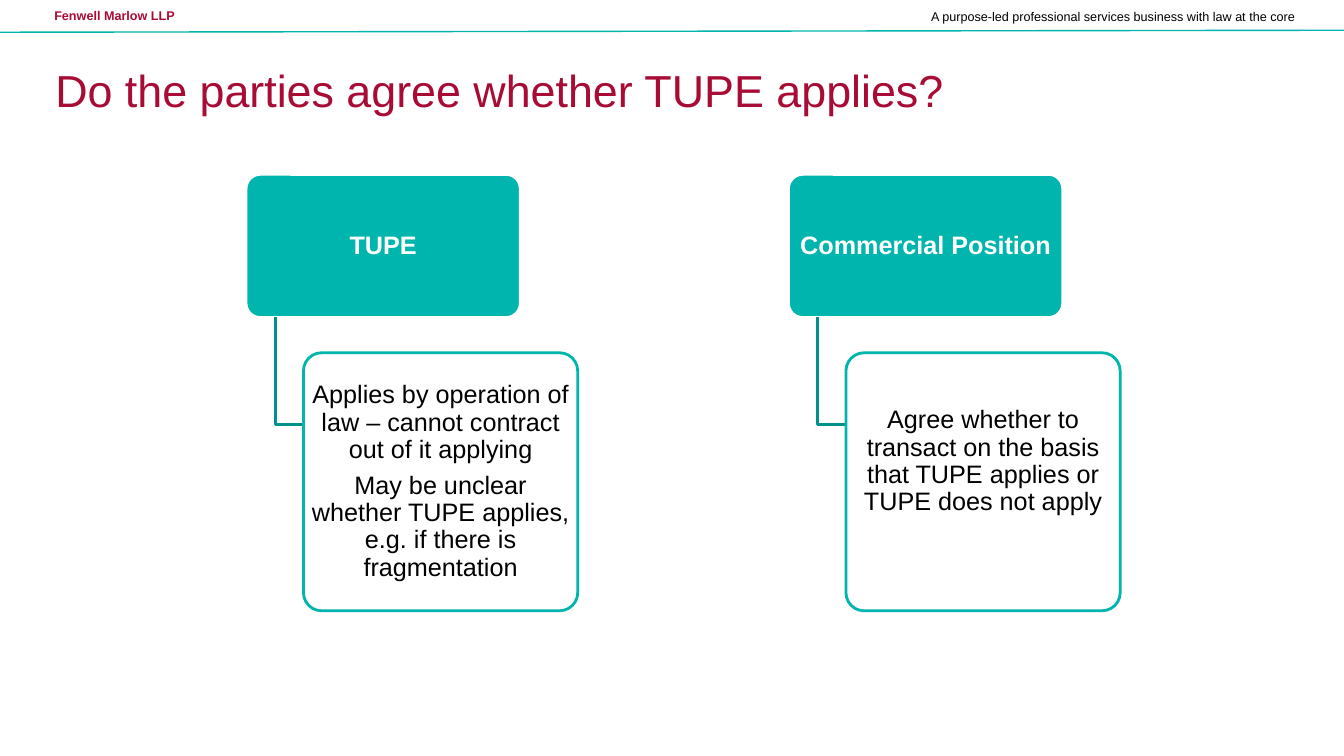
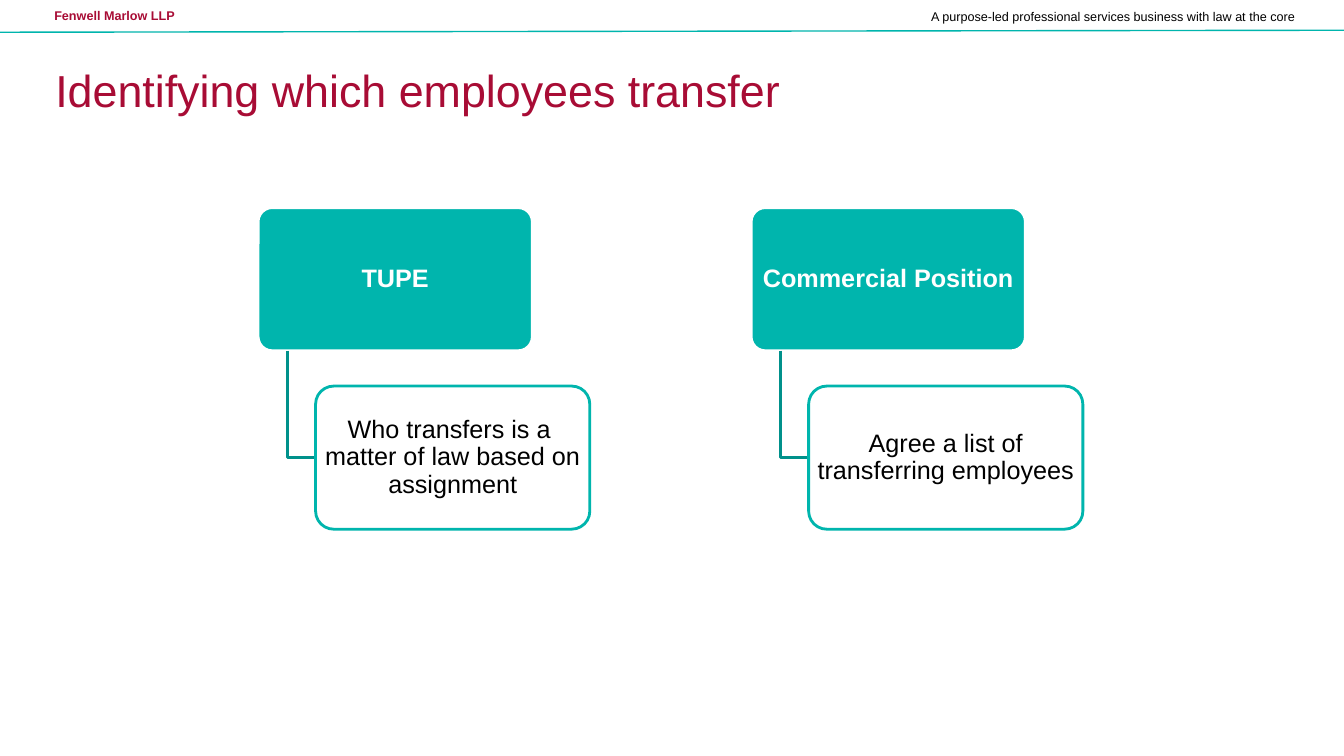
from pptx import Presentation
from pptx.util import Inches, Pt
from pptx.dml.color import RGBColor as Rgb
from pptx.enum.shapes import MSO_SHAPE as Shape, MSO_CONNECTOR as Conn
from pptx.enum.text import PP_ALIGN as Align, MSO_ANCHOR as Anchor
from lxml import etree

# Content: (heading, lines, extra space under the lines)
FIRM = "Fenwell Marlow LLP"
MOTTO = "A purpose-led professional services business with law at the core"
SLIDES = [
    dict(title="Do the parties agree whether TUPE applies?",
         left=2.44, top=1.73, step=5.38, tall=2.56,
         nodes=[("TUPE",
                 ["Applies by operation of law – cannot contract out of it applying",
                  "May be unclear whether TUPE applies, e.g. if there is fragmentation"], 0),
                ("Commercial Position",
                 ["Agree whether to transact on the basis that TUPE applies or "
                  "TUPE does not apply"], 0.4)]),
    dict(title="Identifying which employees transfer",
         left=2.56, top=2.06, step=4.89, tall=1.42,
         nodes=[("TUPE",
                 ["Who transfers is a \vmatter of law based on assignment"], 0),
                ("Commercial Position",
                 ["Agree a list of transferring employees"], 0)]),
]

# Shared style
COLORS = dict(red="A80C35", teal="00B5AD", deep="00918B", white="FFFFFF", black="000000")
STYLES = dict(
    firm=dict(size=9, color="red", bold=True),
    motto=dict(size=9, color="black", align=Align.RIGHT),
    title=dict(size=32, color="red"),
    head=dict(size=18, color="white", bold=True, align=Align.CENTER, line_spacing=0.9),
    body=dict(size=18, color="black", align=Align.CENTER, line_spacing=0.9),
)
WIDE, HIGH = 2.72, 1.42     # heading box
INDENT, GAP = 0.57, 0.35    # body box, from the heading box
STEM, DROP = 0.28, 1.06     # elbow line
PAD = 0.08


def tint(name):
    return Rgb.from_string(COLORS[name])


def write(frame, lines, style):
    look = STYLES[style]
    frame.word_wrap = True
    frame.vertical_anchor = Anchor.MIDDLE
    for i, line in enumerate(lines):
        para = frame.add_paragraph() if i else frame.paragraphs[0]
        para.text = line
        para.alignment = look.get("align", Align.LEFT)
        para.line_spacing = look.get("line_spacing", 1.0)
        if i:
            para.space_before = Pt(6.3)
        for key, value in dict(name="Arial", size=Pt(look["size"]),
                               bold=look.get("bold", False)).items():
            setattr(para.font, key, value)
        para.font.color.rgb = tint(look["color"])


def label(slide, text, style, x, y, w, h):
    box = slide.shapes.add_textbox(Inches(x), Inches(y), Inches(w), Inches(h))
    write(box.text_frame, [text], style)


def card(slide, lines, style, x, y, h, fill, edge, radius, under=0):
    box = slide.shapes.add_shape(Shape.ROUNDED_RECTANGLE, Inches(x), Inches(y),
                                 Inches(WIDE), Inches(h))
    box.shadow.inherit = False
    box.adjustments[0] = radius / min(WIDE, h)
    box.fill.solid()
    box.fill.fore_color.rgb = tint(fill)
    box.line.color.rgb = tint(edge)
    box.line.width = Pt(2)
    # A rounded box already insets its text by 0.29 of the radius
    inset = PAD - 0.29 * radius
    for side in ("left", "top", "right", "bottom"):
        setattr(box.text_frame, "margin_" + side, Inches(inset))
    box.text_frame.margin_bottom = Inches(inset + under)
    write(box.text_frame, lines, style)


def elbow(slide, x, y):
    pen = slide.shapes.build_freeform(Inches(x), Inches(y))
    pen.add_line_segments([(Inches(x), Inches(y + DROP)),
                           (Inches(x + STEM), Inches(y + DROP))], close=False)
    line = pen.convert_to_shape()
    line.shadow.inherit = False
    line.fill.background()
    line.line.color.rgb = tint("deep")
    line.line.width = Pt(2)


def frame(slide, title):
    label(slide, FIRM, "firm", 0.44, 0.03, 5.28, 0.25)
    label(slide, MOTTO, "motto", 5.33, 0.02, 7.61, 0.29)
    rule = slide.shapes.add_connector(Conn.STRAIGHT, 0, Inches(0.32),
                                      Inches(13.33), Inches(0.3))
    rule.line.color.rgb = tint("teal")
    rule.line.width = Pt(1)
    props = rule._element.spPr
    etree.SubElement(props, "{http://schemas.openxmlformats.org/drawingml/2006/main}effectLst")
    label(slide, title, "title", 0.45, 0.39, 12.44, 1)


def main():
    deck = Presentation()
    deck.slide_width, deck.slide_height = Inches(13.33), Inches(7.5)
    for page in SLIDES:
        slide = deck.slides.add_slide(deck.slide_layouts[6])
        frame(slide, page["title"])
        y = page["top"]
        for i, (head, lines, under) in enumerate(page["nodes"]):
            x = page["left"] + i * page["step"]
            card(slide, [head], "head", x, y, HIGH, "teal", "white", 0.14)
            elbow(slide, x + INDENT - STEM, y + HIGH)
            card(slide, lines, "body", x + INDENT, y + HIGH + GAP, page["tall"],
                 "white", "teal", 0.18, under)
    deck.save("out.pptx")


if __name__ == "__main__":
    main()
